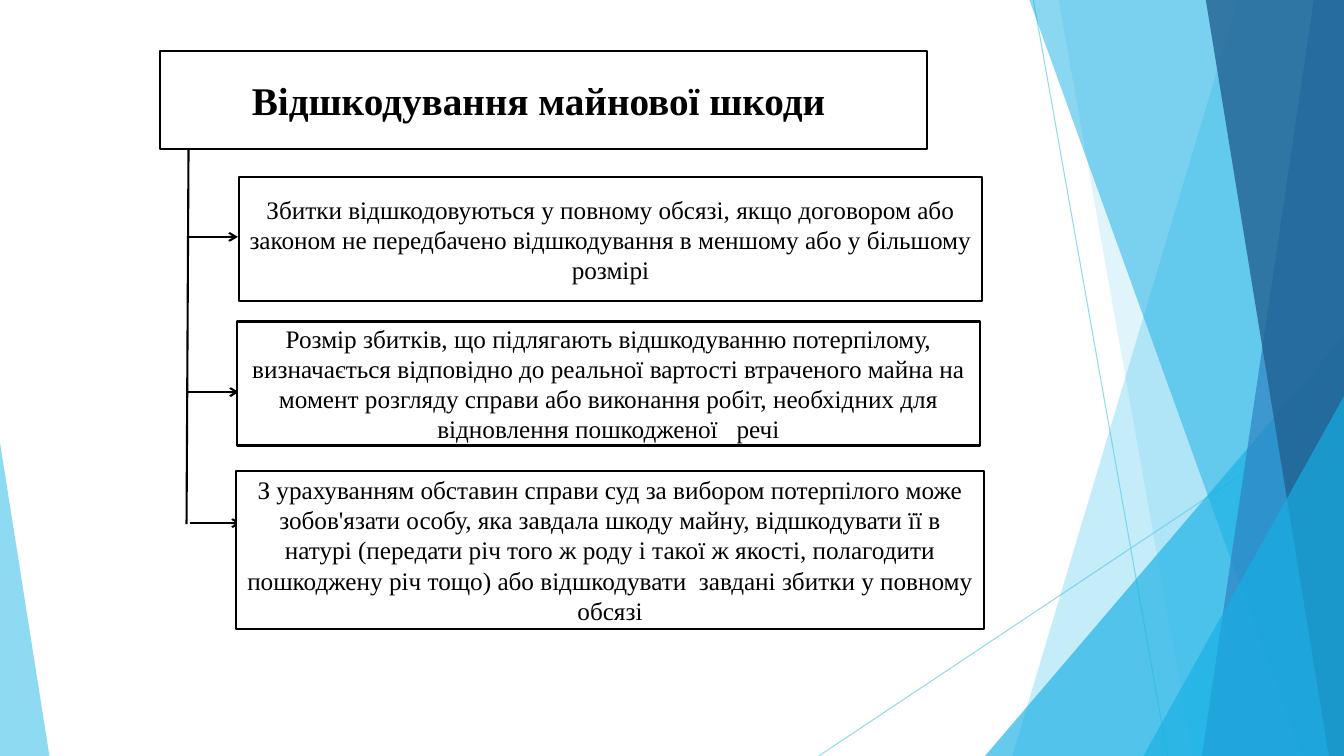
from lxml import etree
from pptx import Presentation
from pptx.dml.color import RGBColor
from pptx.enum.shapes import MSO_CONNECTOR as CONNECTOR, MSO_SHAPE as SHAPE
from pptx.enum.text import MSO_ANCHOR as ANCHOR, MSO_AUTO_SIZE as AUTO_SIZE, PP_ALIGN as ALIGN
from pptx.oxml import parse_xml
from pptx.oxml.ns import nsdecls, qn
from pptx.util import Inches, Pt

BLACK = RGBColor(0x00, 0x00, 0x00)
WHITE = RGBColor(0xFF, 0xFF, 0xFF)
SKY = RGBColor(0x5F, 0xCB, 0xEF)
CYAN = RGBColor(0x17, 0xB0, 0xE4)
BLUE = RGBColor(0x2E, 0x83, 0xC3)
NAVY = RGBColor(0x22, 0x62, 0x92)

FONT = "Times New Roman"
WIDTH, HEIGHT = 13.33, 7.5

# Left, top, width, height and wording of each rule
RULES = [
    (2.37, 1.76, 7.37, 1.23,
     "Збитки відшкодовуються у повному обсязі, якщо договором або законом "
     "не передбачено відшкодування в меншому або у більшому розмірі"),
    (2.35, 3.19, 7.37, 1.23,
     "Розмір збитків, що підлягають відшкодуванню потерпілому, визначається "
     "відповідно до реальної вартості втраченого майна на момент розгляду справи "
     "або виконання робіт, необхідних для відновлення пошкодженої   речі"),
    (2.34, 4.67, 7.42, 1.57,
     "З урахуванням обставин справи суд за вибором потерпілого може зобов'язати "
     "особу, яка завдала шкоду майну, відшкодувати її в натурі (передати річ того ж "
     "роду і такої ж якості, полагодити пошкоджену річ тощо) або відшкодувати  "
     "завдані збитки у повному обсязі"),
]
# Start of the arrow that leads to each rule
ARROWS = [(1.85, 2.35), (1.86, 3.89), (1.88, 5.19)]
ARROW_LENGTH = 0.51


def set_opacity(color_format_parent, percent):
    color = color_format_parent.find(".//" + qn("a:srgbClr"))
    etree.SubElement(color, qn("a:alpha"), val=str(percent * 1000))


def paint_facet(facet, color, opacity):
    facet.shadow.inherit = False
    facet.fill.solid()
    facet.fill.fore_color.rgb = color
    facet.line.fill.background()
    set_opacity(facet.fill._xPr.find(qn("a:solidFill")), opacity)


def add_band(slide, top_left, bottom_left, color, opacity):
    """Facet that runs from a slanted left edge to the right slide edge."""
    outline = slide.shapes.build_freeform(
        Inches(top_left), Inches(0), scale=1.0)
    corners = [(WIDTH, 0), (WIDTH, HEIGHT), (bottom_left, HEIGHT)]
    outline.add_line_segments([(Inches(x), Inches(y)) for x, y in corners])
    paint_facet(outline.convert_to_shape(), color, opacity)


def add_corner(slide, left, top, width, apex, color, opacity):
    """Right-angled facet that stands on the bottom slide edge."""
    corner = slide.shapes.add_shape(
        SHAPE.ISOSCELES_TRIANGLE, Inches(left), Inches(top),
        Inches(width), Inches(HEIGHT - top))
    corner.adjustments[0] = apex
    paint_facet(corner, color, opacity)


def add_line(slide, start, end, color=BLACK, weight=1.5, opacity=100, arrow=False):
    line = slide.shapes.add_connector(
        CONNECTOR.STRAIGHT, *(Inches(value) for value in (*start, *end)))
    line.line.color.rgb = color
    line.line.width = Pt(weight)
    outline = line.line._get_or_add_ln()
    if opacity < 100:
        set_opacity(outline, opacity)
    if arrow:
        etree.SubElement(outline, qn("a:tailEnd"), type="arrow")
    etree.SubElement(outline.getparent(), qn("a:effectLst"))


def format_box(box, text, size, bold=False):
    box.fill.solid()
    box.fill.fore_color.rgb = WHITE
    box.line.color.rgb = BLACK
    box.line.width = Pt(1.5)
    frame = box.text_frame
    frame.text = text
    frame.word_wrap = True
    frame.auto_size = AUTO_SIZE.NONE
    frame.vertical_anchor = ANCHOR.MIDDLE
    paragraph = frame.paragraphs[0]
    paragraph.alignment = ALIGN.CENTER
    font = paragraph.runs[0].font
    font.name, font.size, font.bold = FONT, Pt(size), bold
    font.color.rgb = BLACK


def add_backdrop(slide):
    add_line(slide, (10.25, 0), (11.58, HEIGHT), SKY, 0.75, 70)
    add_line(slide, (WIDTH, 4.03), (8.12, HEIGHT), SKY, 0.75, 70)
    add_band(slide, 12.28, 10.04, SKY, 36)
    add_band(slide, 10.5, 11.83, SKY, 20)
    add_corner(slide, 9.77, 3.33, 3.56, 1, CYAN, 66)
    add_band(slide, 10.21, 12.91, CYAN, 50)
    add_band(slide, 13.03, 11.92, BLUE, 70)
    add_band(slide, 11.96, 13.18, NAVY, 80)
    add_corner(slide, 11.34, 3.93, 1.99, 1, CYAN, 66)
    add_corner(slide, 0, 4.39, 0.49, 0, SKY, 70)


def place_title(slide):
    title = slide.shapes.title
    title.left, title.top = Inches(1.59), Inches(0.51)
    title.width, title.height = Inches(7.6), Inches(0.97)
    # Rounded outline for the title placeholder
    title.element.spPr.append(parse_xml(
        f'<a:prstGeom {nsdecls("a")} prst="roundRect"><a:avLst/></a:prstGeom>'))
    format_box(title, "Відшкодування майнової шкоди ", 28, bold=True)


def add_rule(slide, left, top, width, height, text):
    rule = slide.shapes.add_shape(
        SHAPE.RECTANGLE, Inches(left), Inches(top), Inches(width), Inches(height))
    rule.shadow.inherit = False
    format_box(rule, text, 18)


def main():
    deck = Presentation()
    deck.slide_width, deck.slide_height = Inches(WIDTH), Inches(HEIGHT)
    slide = deck.slides.add_slide(deck.slide_layouts[5])

    add_backdrop(slide)
    place_title(slide)

    # Trunk and arrows from the title to the rules
    add_line(slide, (1.87, 1.48), (1.85, 5.2))
    for x, y in ARROWS:
        add_line(slide, (x, y), (x + ARROW_LENGTH, y), arrow=True)

    for rule in RULES:
        add_rule(slide, *rule)

    deck.save("out.pptx")


if __name__ == "__main__":
    main()
